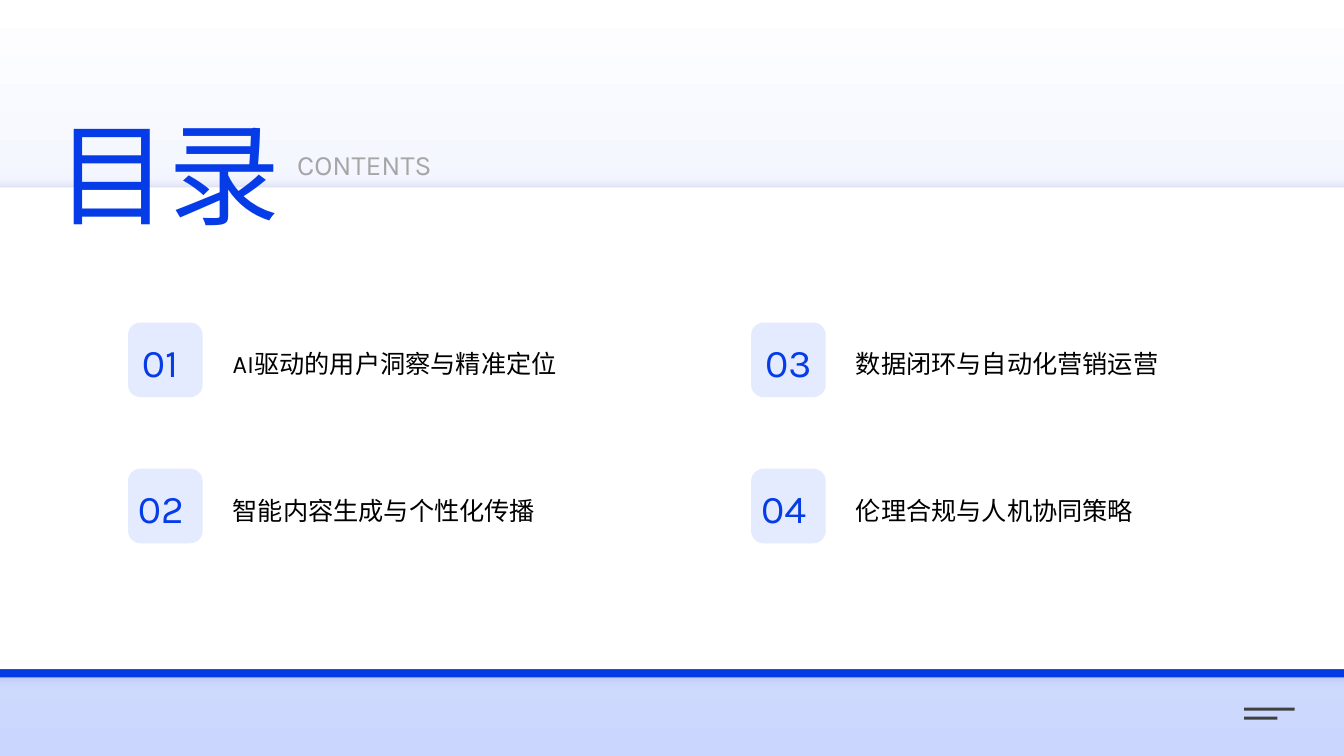
from lxml import etree
from pptx import Presentation
from pptx.dml.color import RGBColor
from pptx.enum.shapes import MSO_SHAPE
from pptx.enum.text import MSO_ANCHOR
from pptx.oxml.ns import qn
from pptx.util import Inches, Pt

RECTANGLE = MSO_SHAPE.RECTANGLE
ROUNDED = MSO_SHAPE.ROUNDED_RECTANGLE
TOP, MIDDLE = MSO_ANCHOR.TOP, MSO_ANCHOR.MIDDLE

FONT = "Karla"
COLORS = {
    "white": "FFFFFF",
    "sky": "CAD6FE",
    "blue": "063CE8",
    "tile": "E4EBFE",
    "shadow": "031E74",
    "mark": "404040",
    "gray": "A6A6A6",
    "black": "000000",
}
# Column left, row top, number, number offset, topic
TOPICS = [
    (1.27, 3.2, "01", 0.04, "AI驱动的用户洞察与精准定位"),
    (1.27, 4.65, "02", 0, "智能内容生成与个性化传播"),
    (7.45, 3.2, "03", 0.04, "数据闭环与自动化营销运营"),
    (7.45, 4.65, "04", 0, "伦理合规与人机协同策略"),
]


def rgb(color):
    return RGBColor.from_string(COLORS[color])


def add_block(page, left, top, width, height, color, kind=RECTANGLE):
    block = page.shapes.add_shape(
        kind, Inches(left), Inches(top), Inches(width), Inches(height))
    block.shadow.inherit = False
    block.fill.solid()
    block.fill.fore_color.rgb = rgb(color)
    block.line.fill.background()
    return block


def add_glow(block):
    effects = block._element.spPr.find(qn("a:effectLst"))
    shadow = etree.SubElement(effects, qn("a:outerShdw"), blurRad=str(Pt(8)),
                              dist="0", dir="0", algn="ctr", rotWithShape="0")
    color = etree.SubElement(shadow, qn("a:srgbClr"), val=COLORS["shadow"])
    etree.SubElement(color, qn("a:alpha"), val="14000")


def add_text(page, left, top, width, height, text, size, color, spacing,
             anchor=TOP):
    box = page.shapes.add_textbox(
        Inches(left), Inches(top), Inches(width), Inches(height))
    frame = box.text_frame
    frame.word_wrap = True
    frame.vertical_anchor = anchor
    frame.text = text
    para = frame.paragraphs[0]
    para.line_spacing = spacing
    span = para.runs[0]
    span.font.name = FONT
    span.font.size = Pt(size)
    span.font.color.rgb = rgb(color)
    etree.SubElement(span.font._element, qn("a:ea"), typeface=FONT)
    return span


def add_background(page):
    backdrop = add_block(page, 0, 0, 13.33, 7.5, "white")
    backdrop.fill.gradient()
    backdrop.fill.gradient_angle = 270
    for stop, color in zip(backdrop.fill.gradient_stops, ("white", "sky")):
        stop.color.rgb = rgb(color)
    # Blue edge below the white panel
    for top, height, color in ((1.93, 4.79, "blue"), (1.86, 4.78, "white")):
        add_glow(add_block(page, -0.33, top, 13.97, height, color))
    # Corner mark
    for top, width in ((7.02, 0.5), (7.11, 0.33)):
        add_block(page, 12.34, top, width, 0.03, "mark")


def add_heading(page):
    title = add_text(page, 0.46, 0.85, 5.79, 1.54, "目录", 80, "blue", 1.1)
    outline = etree.Element(qn("a:ln"), w=str(Pt(1)))
    fill = etree.SubElement(outline, qn("a:solidFill"))
    etree.SubElement(fill, qn("a:srgbClr"), val=COLORS["white"])
    title.font._element.insert(0, outline)
    add_text(page, 2.85, 1.3, 2.23, 0.52, "CONTENTS", 20, "gray", 1.35)


def add_topic(page, left, top, number, offset, topic):
    add_block(page, left, top, 0.74, 0.74, "tile", ROUNDED)
    add_text(page, left + 0.94, top - 0.06, 3.96, 0.85, topic, 18, "black",
             1.3, MIDDLE)
    add_text(page, left + offset, top + 0.08, 0.73, 0.57, number, 28, "blue",
             1.1, MIDDLE)


def main():
    deck = Presentation()
    deck.slide_width, deck.slide_height = Inches(13.33), Inches(7.5)
    page = deck.slides.add_slide(deck.slide_layouts[6])
    add_background(page)
    add_heading(page)
    for topic in TOPICS:
        add_topic(page, *topic)
    deck.save("out.pptx")


if __name__ == "__main__":
    main()
